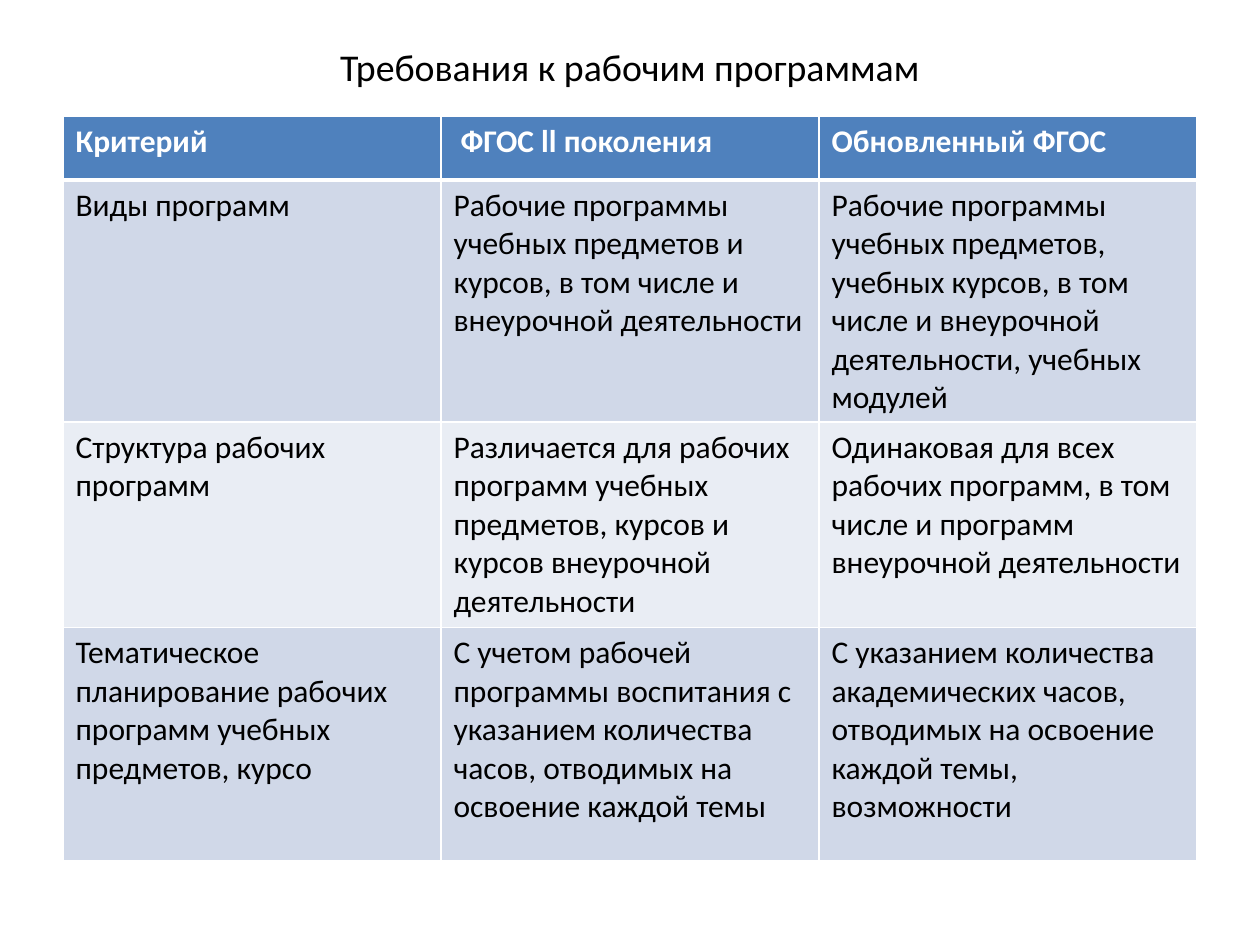
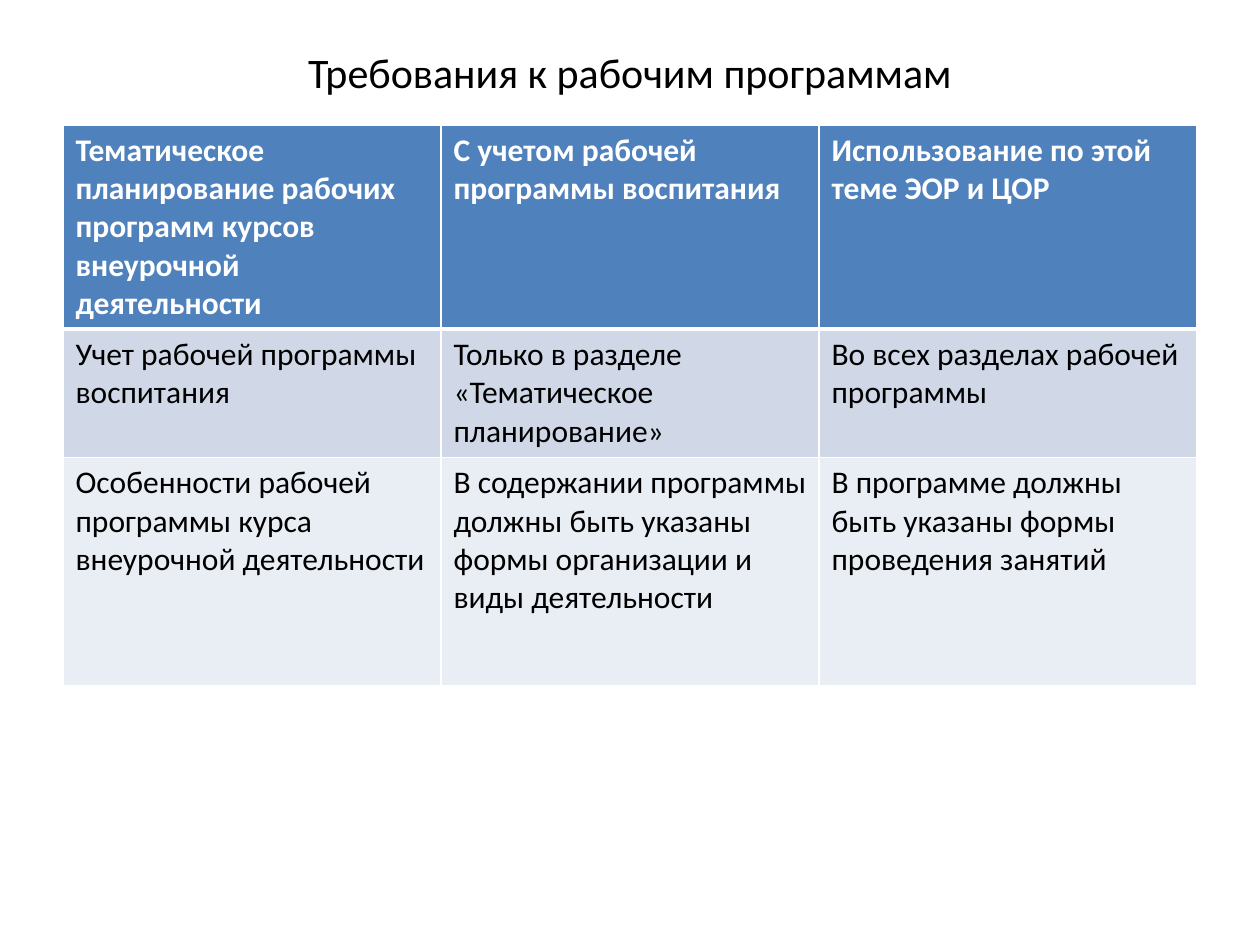
from lxml import etree
from pptx import Presentation
from pptx.dml.color import RGBColor
from pptx.enum.text import MSO_ANCHOR, PP_ALIGN
from pptx.oxml.ns import qn
from pptx.util import Inches, Pt

MIDDLE = MSO_ANCHOR.MIDDLE
CENTER = PP_ALIGN.CENTER

WHITE = RGBColor(0xFF, 0xFF, 0xFF)
BLACK = RGBColor(0x00, 0x00, 0x00)
HEADER_BLUE = RGBColor(0x4F, 0x81, 0xBD)
BANDS = [RGBColor(0xD0, 0xD8, 0xE8), RGBColor(0xE9, 0xED, 0xF4)]

FONT = "Calibri"
CELL_SIZE = 18
THIN, THICK = 1, 3

SLIDE_WIDTH, SLIDE_HEIGHT = Inches(10), Inches(7.5)
MARGIN = int(SLIDE_WIDTH * 0.05)
CONTENT_WIDTH = SLIDE_WIDTH - 2 * MARGIN
TITLE_TOP = int(SLIDE_HEIGHT * 0.04)
TITLE = "Требования к рабочим программам"

# Title size, title height, table top, row heights, rows of text
SLIDES = [
    (21.6, 0.46, 0.92, [0.51, 1.92, 1.63, 1.85], [
        ["Критерий", " ФГОС ll поколения", "Обновленный ФГОС"],
        ["Виды программ",
         "Рабочие программы учебных предметов и курсов, в том числе и "
         "внеурочной деятельности",
         "Рабочие программы учебных предметов, учебных курсов, в том числе "
         "и внеурочной деятельности, учебных модулей"],
        ["Структура рабочих программ",
         "Различается для рабочих программ учебных предметов, курсов и "
         "курсов внеурочной деятельности",
         "Одинаковая для всех рабочих программ, в том числе и программ "
         "внеурочной деятельности"],
        ["Тематическое планирование рабочих программ учебных предметов, курсо",
         "С учетом рабочей программы воспитания с указанием количества "
         "часов, отводимых на освоение каждой темы",
         "С указанием количества академических часов, отводимых на освоение "
         "каждой темы, возможности"],
    ]),
    (24, 0.54, 0.99, [1.62, 1.02, 1.81], [
        ["Тематическое планирование рабочих программ курсов внеурочной "
         "деятельности",
         "С учетом рабочей программы воспитания",
         "Использование по этой теме ЭОР и ЦОР"],
        ["Учет рабочей программы воспитания",
         "Только в разделе «Тематическое планирование»",
         "Во всех разделах рабочей программы"],
        ["Особенности рабочей программы курса внеурочной деятельности",
         "В содержании программы должны быть указаны формы организации и "
         "виды деятельности",
         "В программе должны быть указаны формы проведения занятий"],
    ]),
]


def add_span(para, text, size, color, bold=False):
    span = para.add_run()
    span.text = text
    span.font.name = FONT
    span.font.size = Pt(size)
    span.font.bold = bold
    span.font.color.rgb = color


def set_borders(cell, top, bottom):
    """Draw white cell borders; top and bottom are widths in points."""
    properties = cell._tc.get_or_add_tcPr()
    sides = [("a:lnL", THIN), ("a:lnR", THIN), ("a:lnT", top), ("a:lnB", bottom)]
    for position, (side, width) in enumerate(sides):
        line = etree.Element(qn(side), w=str(Pt(width)))
        fill = etree.SubElement(line, qn("a:solidFill"))
        etree.SubElement(fill, qn("a:srgbClr"), val=str(WHITE))
        properties.insert(position, line)


deck = Presentation()
deck.slide_width, deck.slide_height = SLIDE_WIDTH, SLIDE_HEIGHT
blank_layout = deck.slide_layouts[6]

for title_size, title_height, table_top, row_heights, rows in SLIDES:
    page = deck.slides.add_slide(blank_layout)

    title_box = page.shapes.add_textbox(
        MARGIN, TITLE_TOP, CONTENT_WIDTH, Inches(title_height))
    frame = title_box.text_frame
    frame.word_wrap = True
    frame.vertical_anchor = MIDDLE
    para = frame.paragraphs[0]
    para.alignment = CENTER
    add_span(para, TITLE, title_size, BLACK)

    table = page.shapes.add_table(
        len(rows), len(rows[0]), MARGIN, Inches(table_top),
        CONTENT_WIDTH, Inches(sum(row_heights))).table
    table.horz_banding = False

    for row_index, (height, texts) in enumerate(zip(row_heights, rows)):
        table.rows[row_index].height = Inches(height)
        is_header = row_index == 0
        for column_index, text in enumerate(texts):
            cell = table.cell(row_index, column_index)
            cell.fill.solid()
            cell.fill.fore_color.rgb = (
                HEADER_BLUE if is_header else BANDS[(row_index - 1) % 2])
            set_borders(cell, THICK if row_index == 1 else THIN,
                        THICK if is_header else THIN)
            add_span(cell.text_frame.paragraphs[0], text, CELL_SIZE,
                     WHITE if is_header else BLACK, is_header)

deck.save("out.pptx")
